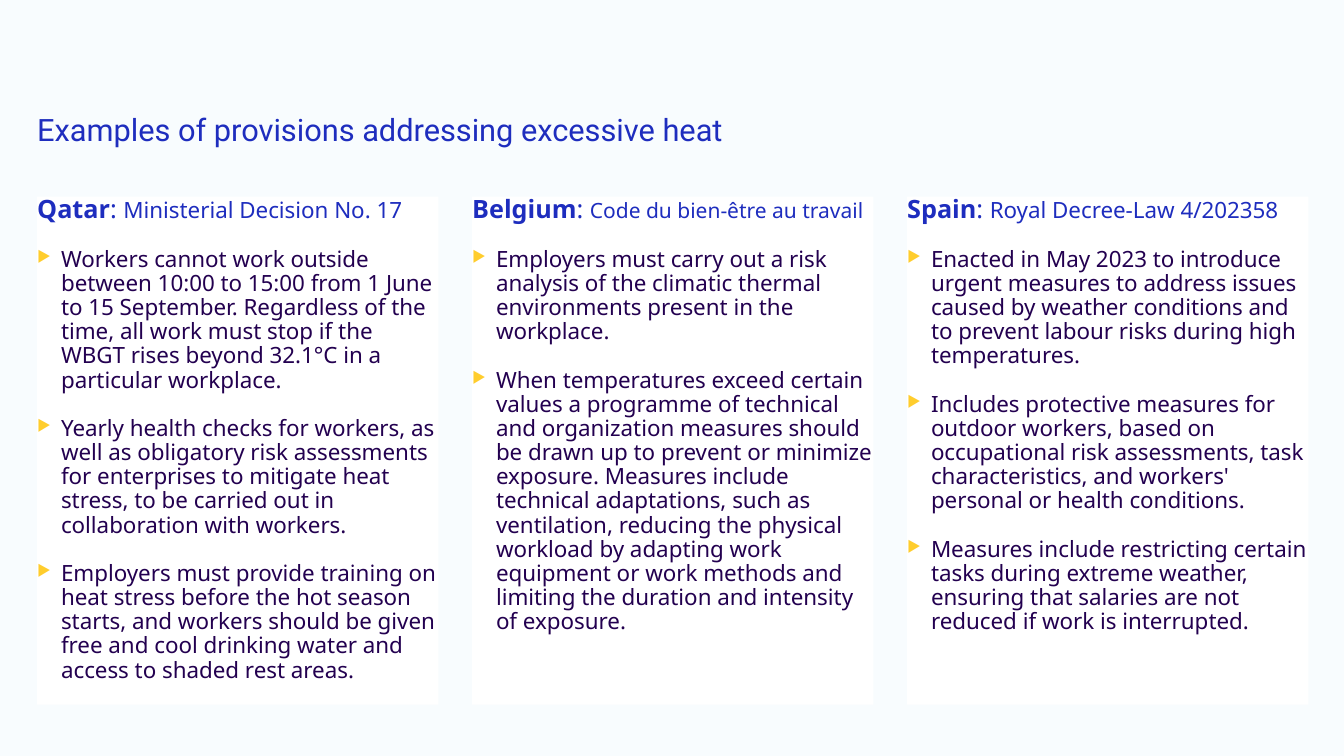
from lxml.etree import SubElement
from pptx import Presentation
from pptx.dml.color import RGBColor
from pptx.enum.shapes import MSO_SHAPE as Preset
from pptx.enum.text import MSO_ANCHOR as Anchor, PP_ALIGN as Align
from pptx.oxml.ns import qn
from pptx.util import Pt

BACKGROUND = RGBColor(0xF8, 0xFC, 0xFE)
WHITE = RGBColor(0xFF, 0xFF, 0xFF)
BLUE = RGBColor(0x1E, 0x2D, 0xBE)
PURPLE = RGBColor(0x23, 0x00, 0x50)
YELLOW = RGBColor(0xFF, 0xCD, 0x2D)

HEADING_FONT = "Roboto"
BODY_FONT = "Noto Sans"
LINE_SPACING = 0.9
PROVISION_GAP = 17.25
BULLET_INDENT = 17

MARGIN = 26.6
COLUMN_STEP = 310.7
COLUMN_WIDTH = 286.6
COLUMN_TOP = 140.4
COLUMN_HEIGHT = 362.9

COUNTRIES = [
    ("Qatar", "Ministerial Decision No. 17", 16, [
        "Workers cannot work outside between 10:00 to 15:00 from 1 June to 15 September. "
        "Regardless of the time, all work must stop if the WBGT rises beyond 32.1°C in a "
        "particular workplace.",
        "Yearly health checks for workers, as well as obligatory risk assessments for "
        "enterprises to mitigate heat stress, to be carried out in collaboration with workers.",
        "Employers must provide training on heat stress before the hot season starts, and "
        "workers should be given free and cool drinking water and access to shaded rest areas.",
    ]),
    ("Belgium", "Code du bien-être au travail", 15, [
        "Employers must carry out a risk analysis of the climatic thermal environments "
        "present in the workplace.",
        "When temperatures exceed certain values a programme of technical and organization "
        "measures should be drawn up to prevent or minimize exposure. Measures include "
        "technical adaptations, such as ventilation, reducing the physical workload by "
        "adapting work equipment or work methods and limiting the duration and intensity "
        "of exposure.",
    ]),
    ("Spain", "Royal Decree-Law 4/202358", 16, [
        "Enacted in May 2023 to introduce urgent measures to address issues caused by "
        "weather conditions and to prevent labour risks during high temperatures.",
        "Includes protective measures for outdoor workers, based on occupational risk "
        "assessments, task characteristics, and workers' personal or health conditions.",
        "Measures include restricting certain tasks during extreme weather, ensuring that "
        "salaries are not reduced if work is interrupted.",
    ]),
]


def prepare_frame(shape):
    frame = shape.text_frame
    frame.word_wrap = True
    frame.vertical_anchor = Anchor.TOP
    frame.margin_left = frame.margin_top = frame.margin_right = frame.margin_bottom = 0
    return frame


def add_run(paragraph, text, size, color, font_name=BODY_FONT, bold=False):
    run = paragraph.add_run()
    run.text = text
    run.font.name = font_name
    run.font.size = Pt(size)
    run.font.bold = bold
    run.font.color.rgb = color


def add_bullet(paragraph):
    properties = paragraph._p.get_or_add_pPr()
    properties.set("marL", str(Pt(BULLET_INDENT)))
    properties.set("indent", str(-Pt(BULLET_INDENT)))
    bullet_color = SubElement(properties, qn("a:buClr"))
    SubElement(bullet_color, qn("a:srgbClr"), val=str(YELLOW))
    SubElement(properties, qn("a:buSzPct"), val="70000")
    SubElement(properties, qn("a:buChar"), char="▶")


def add_title(slide, left, top, width, height):
    shape = slide.shapes.add_textbox(Pt(left), Pt(top), Pt(width), Pt(height))
    paragraph = prepare_frame(shape).paragraphs[0]
    paragraph.line_spacing = LINE_SPACING
    add_run(paragraph, "Examples of provisions addressing excessive heat", 22, BLUE, HEADING_FONT)


def add_country(slide, left, top, width, height, country, law, law_size, provisions):
    shape = slide.shapes.add_shape(Preset.RECTANGLE, Pt(left), Pt(top), Pt(width), Pt(height))
    shape.shadow.inherit = False
    shape.fill.solid()
    shape.fill.fore_color.rgb = WHITE
    shape.line.fill.background()
    frame = prepare_frame(shape)

    heading = frame.paragraphs[0]
    heading.alignment = Align.LEFT
    heading.line_spacing = LINE_SPACING
    add_run(heading, country, 18, BLUE, bold=True)
    add_run(heading, ": ", 18, BLUE)
    add_run(heading, law, law_size, BLUE)

    for provision in provisions:
        paragraph = frame.add_paragraph()
        add_bullet(paragraph)
        paragraph.alignment = Align.LEFT
        paragraph.line_spacing = LINE_SPACING
        paragraph.space_before = Pt(PROVISION_GAP)
        add_run(paragraph, provision, 16, PURPLE)


def main():
    presentation = Presentation()
    presentation.slide_width = Pt(960)
    presentation.slide_height = Pt(540)
    slide = presentation.slides.add_slide(presentation.slide_layouts[6])
    slide.background.fill.solid()
    slide.background.fill.fore_color.rgb = BACKGROUND

    add_title(slide, MARGIN, 82.1, 907.9, 36.7)
    for index, country in enumerate(COUNTRIES):
        left = MARGIN + index * COLUMN_STEP
        add_country(slide, left, COLUMN_TOP, COLUMN_WIDTH, COLUMN_HEIGHT, *country)

    presentation.save("out.pptx")


if __name__ == "__main__":
    main()
